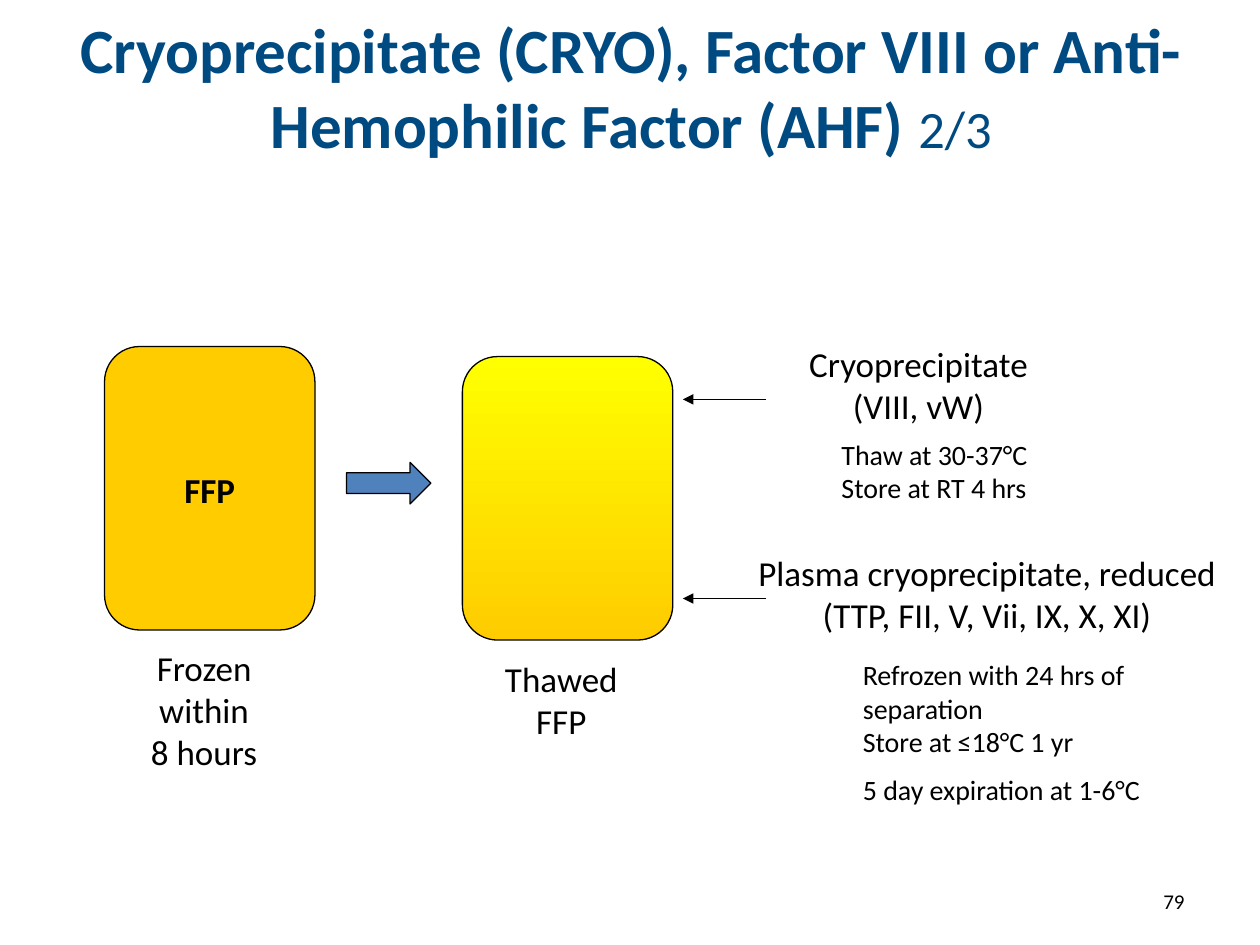
from lxml import etree
from pptx import Presentation
from pptx.dml.color import RGBColor
from pptx.enum.shapes import MSO_CONNECTOR, MSO_SHAPE
from pptx.enum.text import MSO_ANCHOR, MSO_AUTO_SIZE, PP_ALIGN
from pptx.oxml.ns import qn
from pptx.util import Inches, Pt

ROUNDED = MSO_SHAPE.ROUNDED_RECTANGLE
RIGHT_ARROW = MSO_SHAPE.RIGHT_ARROW
STRAIGHT = MSO_CONNECTOR.STRAIGHT
TOP, MIDDLE = MSO_ANCHOR.TOP, MSO_ANCHOR.MIDDLE
GROW, FIXED = MSO_AUTO_SIZE.SHAPE_TO_FIT_TEXT, MSO_AUTO_SIZE.NONE
LEFT, CENTER, RIGHT = PP_ALIGN.LEFT, PP_ALIGN.CENTER, PP_ALIGN.RIGHT

BLACK, NAVY, BLUE = "000000", "004A82", "4F81BD"
YELLOW, AMBER = "FFFF00", "FFCC00"
BAG_SIZE = (1.67, 2.25)


def rgb(value):
    return RGBColor.from_string(value)


def apply(target, values):
    for name, value in values.items():
        setattr(target, name, value)


class SlideBuilder:
    font = "Calibri"
    line_width = Pt(0.75)

    def __init__(self, slide):
        self.slide = slide

    def outline(self, line):
        line.color.rgb = rgb(BLACK)
        line.width = self.line_width

    def shape(self, kind, left, top, width, height, colors, adjustments):
        shape = self.slide.shapes.add_shape(
            kind, Inches(left), Inches(top), Inches(width), Inches(height)
        )
        shape.shadow.inherit = False
        for index, value in enumerate(adjustments):
            shape.adjustments[index] = value
        if len(colors) == 1:
            shape.fill.solid()
            shape.fill.fore_color.rgb = rgb(colors[0])
        else:
            shape.fill.gradient()
            shape.fill.gradient_angle = 270
            for index, stop in enumerate(shape.fill.gradient_stops):
                stop.position = index
                stop.color.rgb = rgb(colors[index])
        self.outline(shape.line)

    def bag(self, left, top, *colors):
        self.shape(ROUNDED, left, top, *BAG_SIZE, colors, [0.167])

    def arrow(self, start, end, y):
        arrow = self.slide.shapes.add_connector(
            STRAIGHT, Inches(start), Inches(y), Inches(end), Inches(y)
        )
        self.outline(arrow.line)
        properties = arrow._element.spPr
        etree.SubElement(arrow.line._get_or_add_ln(), qn("a:tailEnd"), type="triangle")
        etree.SubElement(properties, qn("a:effectLst"))

    def text(self, left, top, width, height, paragraphs, size=20, align=CENTER,
             color=BLACK, bold=False, anchor=TOP, auto_size=GROW):
        box = self.slide.shapes.add_textbox(
            Inches(left), Inches(top), Inches(width), Inches(height)
        )
        frame = box.text_frame
        apply(frame, {"word_wrap": True, "auto_size": auto_size, "vertical_anchor": anchor})
        frame.text = "\n".join(paragraphs)
        for index, paragraph in enumerate(frame.paragraphs):
            paragraph.alignment = align
            if index:
                paragraph.space_before = Pt(size / 2)
            for run in paragraph.runs:
                self.style(run, size, color, bold)
        return frame

    def style(self, run, size, color, bold):
        apply(run.font, {"name": self.font, "size": Pt(size), "bold": bold})
        run.font.color.rgb = rgb(color)

    def title(self, heading, part):
        frame = self.text(0.51, 0.13, 9, 1.1, [heading], 36, color=NAVY, bold=True,
                          anchor=MIDDLE, auto_size=FIXED)
        counter = frame.paragraphs[0].add_run()
        counter.text = part
        self.style(counter, 30, NAVY, False)


def main():
    presentation = Presentation()
    presentation.slide_width = Inches(10)
    presentation.slide_height = Inches(7.5)
    builder = SlideBuilder(presentation.slides.add_slide(presentation.slide_layouts[6]))

    builder.title("Cryoprecipitate (CRYO), Factor VIII or Anti-Hemophilic Factor (AHF) ", "2/3")

    builder.bag(0.83, 2.75, AMBER)
    builder.text(1, 3.67, 1.33, 0.44, ["FFP"], bold=True)
    builder.shape(RIGHT_ARROW, 2.75, 3.67, 0.67, 0.33, [BLUE], [0.5, 0.5])
    builder.bag(3.67, 2.83, YELLOW, AMBER)

    for y in (3.17, 4.75):
        builder.arrow(6.08, 5.42, y)

    labels = [
        (1.08, 5.08, 1.08, 1.11, "Frozen within 8 hours"),
        (3.83, 5.17, 1.25, 0.77, "Thawed FFP"),
        (6.25, 2.67, 2.08, 0.77, "Cryoprecipitate (VIII, vW)"),
        (5.92, 4.33, 3.83, 0.77,
         "Plasma cryoprecipitate, reduced (TTP, FII, V, Vii, IX, X, XI)"),
    ]
    for *place, label in labels:
        builder.text(*place, [label])

    storage_notes = [
        (6.58, 3.42, 1.75, 0.64, ["Thaw at 30-37°C Store at RT 4 hrs"]),
        (6.75, 5.17, 2.5, 1.31,
         ["Refrozen with 24 hrs of separation\vStore at ≤18°C 1 yr",
          "5 day expiration at 1-6°C"]),
    ]
    for *place, notes in storage_notes:
        builder.text(*place, notes, size=16, align=LEFT)

    builder.text(7.17, 6.95, 2.33, 0.4, ["79"], size=12, align=RIGHT,
                 anchor=MIDDLE, auto_size=FIXED)

    presentation.save("out.pptx")


if __name__ == "__main__":
    main()
